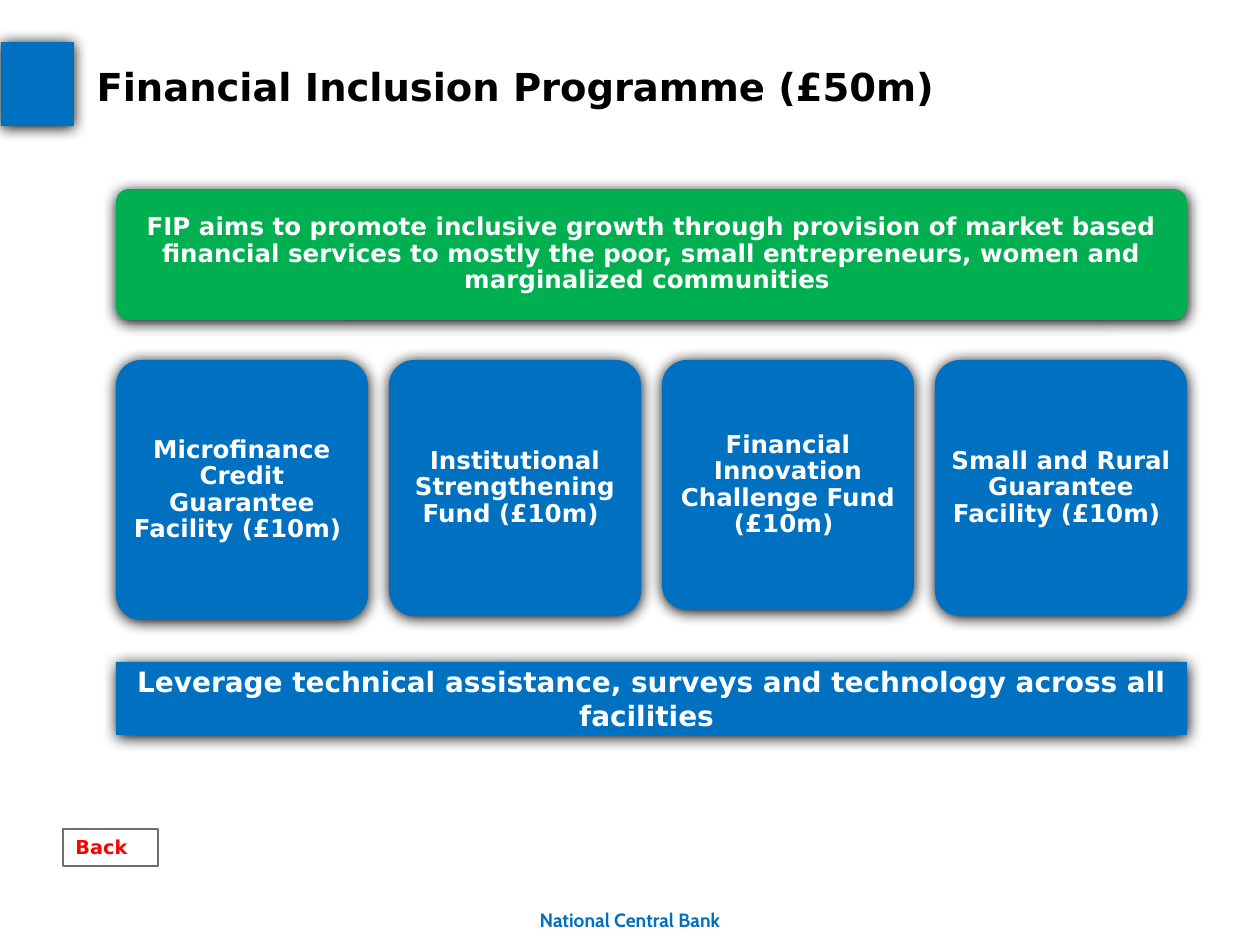
from lxml.etree import SubElement
from pptx import Presentation
from pptx.dml.color import RGBColor
from pptx.enum.shapes import MSO_SHAPE
from pptx.enum.text import MSO_ANCHOR, PP_ALIGN
from pptx.oxml.ns import qn
from pptx.util import Emu, Pt

BLUE = RGBColor(0x00, 0x70, 0xC0)
GREEN = RGBColor(0x00, 0xB0, 0x50)
WHITE = RGBColor(0xFF, 0xFF, 0xFF)
BLACK = RGBColor(0x00, 0x00, 0x00)
RED = RGBColor(0xFF, 0x00, 0x00)
GREY = RGBColor(0x6F, 0x6F, 0x6F)

PAGE_WIDTH, PAGE_HEIGHT = 1260, 945
CONTENT_LEFT, CONTENT_WIDTH = 116, 1071
CARD_WIDTH = 252
FACILITIES = [
    ("Microfinance Credit Guarantee Facility (£10m) ", 260),
    ("Institutional Strengthening Fund (£10m) ", 256),
    ("Financial Innovation Challenge Fund (£10m) ", 250),
    ("Small and Rural Guarantee Facility (£10m) ", 256),
]


def px(length):
    return Emu(round(length * 914400 / 126))


def apply_format(target, values):
    for name, value in values.items():
        setattr(target, name, value)


def write_text(shape, text, size, color, font="DejaVu Sans", frame_format=None, para_format=None):
    frame = shape.text_frame
    apply_format(frame, {"word_wrap": True, **(frame_format or {})})
    para = frame.paragraphs[0]
    apply_format(para, {"alignment": PP_ALIGN.CENTER, **(para_format or {})})
    span = para.add_run()
    span.text = text
    apply_format(span.font, {"name": font, "size": Pt(size), "bold": True})
    span.font.color.rgb = color


def add_block(page, box, fill=None, kind=MSO_SHAPE.RECTANGLE, shadow=True):
    block = page.shapes.add_shape(kind, *map(px, box))
    if fill is None:
        block.fill.background()
    else:
        block.fill.solid()
        block.fill.fore_color.rgb = fill
    block.line.fill.background()
    block.shadow.inherit = False
    if shadow:
        effects = block._element.spPr.find(qn("a:effectLst"))
        outer = SubElement(effects, qn("a:outerShdw"), blurRad=str(Pt(8.5)),
                           dist=str(Pt(1)), dir="5400000", rotWithShape="0")
        SubElement(outer, qn("a:srgbClr"), val="000000")
    return block


def add_card(page, box, text, fill):
    card = add_block(page, box, fill, MSO_SHAPE.ROUNDED_RECTANGLE)
    card.adjustments[0] = 0.1
    sides = ("margin_left", "margin_right", "margin_top", "margin_bottom")
    write_text(card, text, 14, WHITE,
               frame_format={"vertical_anchor": MSO_ANCHOR.MIDDLE, **dict.fromkeys(sides, px(8))},
               para_format={"line_spacing": 0.9})


def add_header(page, box):
    left, top, width, height = box
    add_block(page, (left, top, 73, height), BLUE)
    title = page.shapes.title
    apply_format(title, {"left": px(left + 83), "top": px(top + 15),
                         "width": px(width), "height": px(59)})
    write_text(title, "Financial Inclusion Programme (£50m)", 22, BLACK,
               frame_format={"vertical_anchor": MSO_ANCHOR.BOTTOM},
               para_format={"alignment": PP_ALIGN.LEFT})


def add_facilities(page, box):
    left, top, width, _ = box
    pitch = (width - CARD_WIDTH) / (len(FACILITIES) - 1)
    for index, (text, height) in enumerate(FACILITIES):
        add_card(page, (left + index * pitch, top, CARD_WIDTH, height), text, BLUE)


def add_support_strip(page, box):
    strip = add_block(page, box, BLUE)
    write_text(strip, "Leverage technical assistance, surveys and technology across all facilities ",
               16, WHITE, frame_format={"vertical_anchor": MSO_ANCHOR.MIDDLE})


def add_back_button(page, box):
    button = add_block(page, box, shadow=False)
    button.line.color.rgb = GREY
    button.line.width = Pt(0.75)
    write_text(button, "Back", 11, RED,
               frame_format={"vertical_anchor": MSO_ANCHOR.TOP},
               para_format={"alignment": PP_ALIGN.LEFT})


def add_footer(page, box):
    footer = add_block(page, box, WHITE, shadow=False)
    write_text(footer, "National Central Bank", 11, BLUE, "Cabin",
               {"vertical_anchor": MSO_ANCHOR.MIDDLE, "margin_top": px(12), "margin_bottom": 0})


def main():
    deck = Presentation()
    apply_format(deck, {"slide_width": px(PAGE_WIDTH), "slide_height": px(PAGE_HEIGHT)})
    page = deck.slides.add_slide(deck.slide_layouts[5])
    add_footer(page, (0, 882, PAGE_WIDTH, 63))
    add_header(page, (1, 42, 987, 84))
    add_card(page, (CONTENT_LEFT, 189, CONTENT_WIDTH, 131),
             "FIP aims to promote inclusive growth through provision of market based financial "
             "services to mostly the poor, small entrepreneurs, women and marginalized communities ",
             GREEN)
    add_facilities(page, (CONTENT_LEFT, 360, CONTENT_WIDTH, 260))
    add_support_strip(page, (CONTENT_LEFT, 662, CONTENT_WIDTH, 73))
    add_back_button(page, (63, 829, 95, 37))
    deck.save("out.pptx")


if __name__ == "__main__":
    main()
